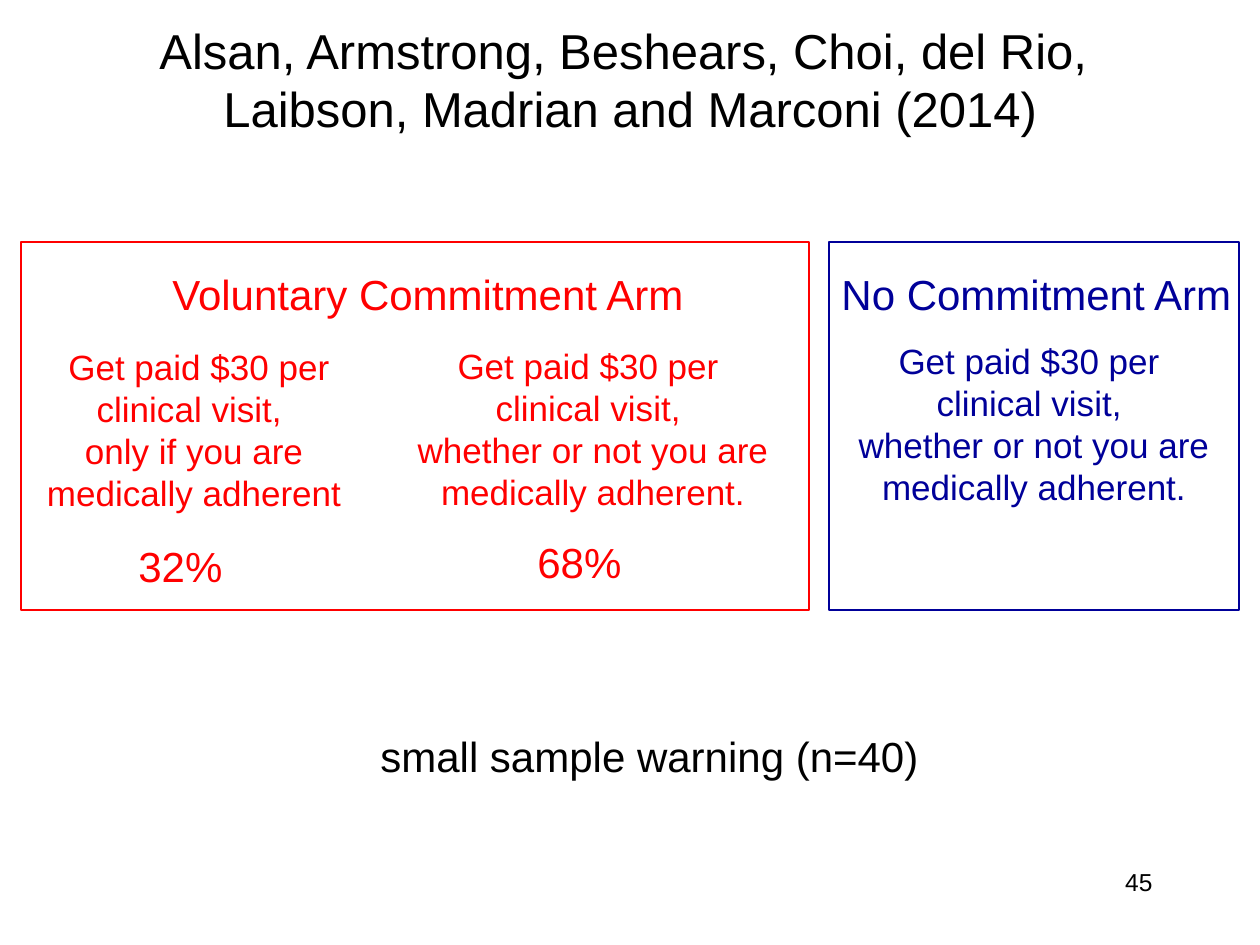
from pptx import Presentation
from pptx.dml.color import RGBColor
from pptx.enum.shapes import MSO_SHAPE
from pptx.enum.text import MSO_ANCHOR, MSO_AUTO_SIZE, PP_ALIGN
from pptx.util import Pt

EMU_PER_PX = 914400 / 126
FONT = "Arial"
BLACK = RGBColor(0, 0, 0)
RED = RGBColor(255, 0, 0)
NAVY = RGBColor(0, 0, 0x99)
LEFT, CENTER, RIGHT = PP_ALIGN.LEFT, PP_ALIGN.CENTER, PP_ALIGN.RIGHT
MIDDLE = MSO_ANCHOR.MIDDLE
GROW, FIXED = MSO_AUTO_SIZE.SHAPE_TO_FIT_TEXT, MSO_AUTO_SIZE.NONE
RECTANGLE = MSO_SHAPE.RECTANGLE

ARM_TOP, ARM_HEIGHT = 242, 368
UNCONDITIONAL = [
    "Get paid $30 per ",
    "clinical visit, ",
    "whether or not you are medically adherent.",
]
CONDITIONAL = [
    "Get paid $30 per clinical visit,  ",
    "only if you are ",
    "medically adherent ",
]


def px(*lengths):
    return [round(length * EMU_PER_PX) for length in lengths]


def add_span(para, text, size, color):
    span = para.add_run()
    span.text = text
    span.font.name = FONT
    span.font.size = Pt(size)
    span.font.color.rgb = color


def fill_title(title, lines):
    title.left, title.top, title.width, title.height = px(63, 0, 1134, 158)
    frame = title.text_frame
    frame.vertical_anchor = MIDDLE
    frame.auto_size = FIXED
    para = frame.paragraphs[0]
    para.alignment = CENTER
    for index, line in enumerate(lines):
        if index:
            para.add_line_break()
        add_span(para, line, 28, BLACK)


def add_text(page, bounds, lines, size, color, align=LEFT, wrap=False, fit=GROW):
    box = page.shapes.add_textbox(*px(*bounds))
    frame = box.text_frame
    frame.word_wrap = wrap
    frame.auto_size = fit
    for index, line in enumerate(lines):
        para = frame.add_paragraph() if index else frame.paragraphs[0]
        para.alignment = align
        add_span(para, line, size, color)


def add_label(page, left, top, width, text, color):
    add_text(page, (left, top, width, 63), [text], 24, color)


def add_offer(page, left, top, width, lines, color):
    add_text(page, (left, top, width, 183), lines, 20, color, CENTER, True)


def add_arm_frame(page, left, width, color):
    frame = page.shapes.add_shape(RECTANGLE, *px(left, ARM_TOP, width, ARM_HEIGHT))
    frame.shadow.inherit = False
    frame.fill.background()
    frame.line.color.rgb = color
    frame.line.width = Pt(0.75)


def main():
    deck = Presentation()
    deck.slide_width, deck.slide_height = px(1260, 945)
    page = deck.slides.add_slide(deck.slide_layouts[5])

    fill_title(page.shapes.title, [
        "Alsan, Armstrong, Beshears, Choi, del Rio, ",
        "Laibson, Madrian and Marconi (2014)",
    ])

    add_label(page, 525, 530, 111, "68%", RED)
    add_label(page, 126, 534, 111, "32%", RED)
    add_offer(page, 388, 338, 410, UNCONDITIONAL, RED)
    add_offer(page, 10, 339, 378, CONDITIONAL, RED)
    add_label(page, 160, 262, 542, "Voluntary Commitment Arm", RED)
    add_label(page, 829, 262, 420, "No Commitment Arm", NAVY)
    add_label(page, 368, 724, 570, "small sample warning (n=40)", BLACK)
    add_offer(page, 829, 333, 410, UNCONDITIONAL, NAVY)

    add_arm_frame(page, 21, 788, RED)
    add_arm_frame(page, 829, 410, NAVY)
    add_text(page, (903, 861, 262, 63), ["45"], 14, BLACK, RIGHT, True, FIXED)

    deck.save("out.pptx")


if __name__ == "__main__":
    main()
